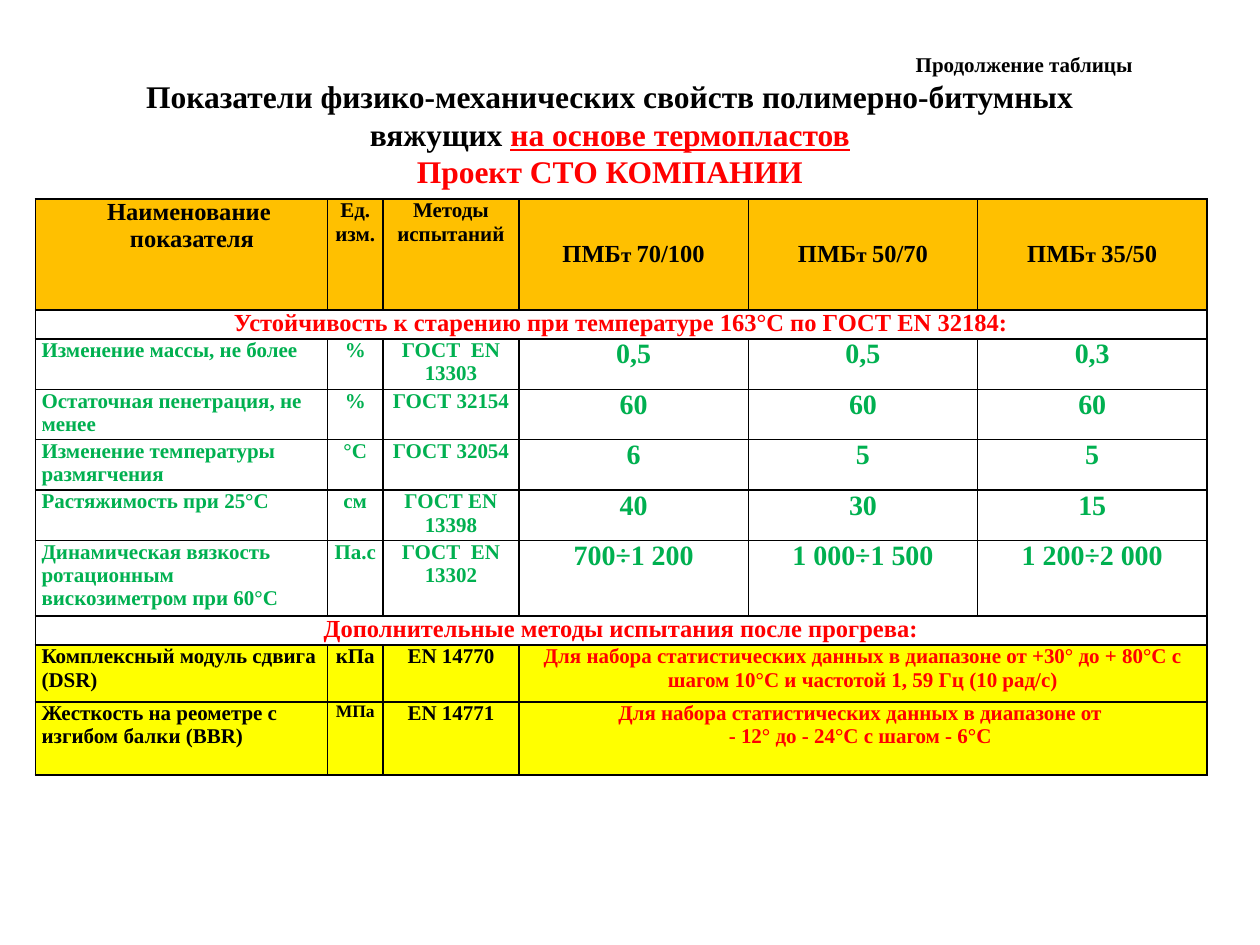
from dataclasses import dataclass

from lxml import etree
from pptx import Presentation
from pptx.dml.color import RGBColor
from pptx.enum.text import MSO_ANCHOR, MSO_AUTO_SIZE, PP_ALIGN
from pptx.oxml.ns import qn
from pptx.util import Inches, Pt

LEFT, CENTER, RIGHT = PP_ALIGN.LEFT, PP_ALIGN.CENTER, PP_ALIGN.RIGHT
TOP, MIDDLE = MSO_ANCHOR.TOP, MSO_ANCHOR.MIDDLE
NO_AUTOFIT = MSO_AUTO_SIZE.NONE
TITLE_ONLY = 5


@dataclass(frozen=True)
class Theme:
    font: str = "Times New Roman"
    black: str = "000000"
    red: str = "FF0000"
    green: str = "00B050"
    orange: str = "FFC000"
    yellow: str = "FFFF00"
    tiny: int = 10
    small: int = 12
    medium: int = 14
    large: int = 16
    title: int = 18


THEME = Theme()
COLUMN_WIDTHS = [2.32, 0.44, 1.08] + [1.82] * 3
ROW_HEIGHTS = [0.88, 0.23] + [0.4] * 4 + [0.6, 0.23, 0.45, 0.58]

GRADES = ["70/100", "50/70", "35/50"]
AGEING_TITLE = "Устойчивость к старению при температуре 163°С по ГОСТ EN 32184:"
AGEING_ROWS = [
    ("Изменение массы, не более", "%", "ГОСТ  EN 13303", "0,5", "0,5", "0,3"),
    ("Остаточная пенетрация, не менее", "%", "ГОСТ 32154", "60", "60", "60"),
    ("Изменение температуры размягчения", "°С", "ГОСТ 32054", "6", "5", "5"),
    ("Растяжимость при 25°С", "см", "ГОСТ EN 13398", "40", "30", "15"),
    ("Динамическая вязкость ротационным вискозиметром при 60°С", "Па.с",
     "ГОСТ  EN 13302", "700÷1 200", "1 000÷1 500", "1 200÷2 000"),
]
EXTRA_TITLE = "Дополнительные методы испытания после прогрева:"
EXTRA_ROWS = [
    ("Комплексный модуль сдвига (DSR)", "кПа", THEME.small, "EN 14770",
     ["Для набора статистических данных в диапазоне от +30° до + 80°С "
      "с шагом 10°С и частотой 1, 59 Гц (10 рад/с)"]),
    ("Жесткость на реометре с изгибом балки (BBR)", "МПа", THEME.tiny, "EN 14771",
     ["Для набора статистических данных в диапазоне от ",
      "- 12° до - 24°С с шагом - 6°С "]),
]


def add_run(paragraph, text, size=THEME.small, color=THEME.black, underline=False):
    run = paragraph.add_run()
    run.text = text
    run.font.name = THEME.font
    run.font.size = Pt(size)
    run.font.bold = True
    run.font.underline = underline
    run.font.color.rgb = RGBColor.from_string(color)


def write_text(paragraph, text, align=CENTER, indent=0, **run_format):
    paragraph.alignment = align
    if indent:
        paragraph._p.get_or_add_pPr().set("marL", str(Inches(indent)))
    runs = [(text, {})] if isinstance(text, str) else text
    for run_text, changes in runs:
        add_run(paragraph, run_text, **{**run_format, **changes})


def write_paragraphs(frame, texts, **text_format):
    for index, text in enumerate(texts):
        paragraph = frame.add_paragraph() if index else frame.paragraphs[0]
        write_text(paragraph, text, **text_format)


def add_borders(cell):
    properties = cell._tc.get_or_add_tcPr()
    for side in ("a:lnL", "a:lnR", "a:lnT", "a:lnB"):
        line = etree.SubElement(properties, qn(side), w=str(Pt(1)))
        fill = etree.SubElement(line, qn("a:solidFill"))
        etree.SubElement(fill, qn("a:srgbClr"), val=THEME.black)


def fill_cell(cell, texts, anchor=TOP, **text_format):
    cell.vertical_anchor = anchor
    write_paragraphs(cell.text_frame, texts, **text_format)


def style_row(row, color=None):
    for cell in row.cells:
        cell.margin_left = cell.margin_right = Inches(0.05)
        cell.margin_top = cell.margin_bottom = 0
        add_borders(cell)
        if color:
            cell.fill.solid()
            cell.fill.fore_color.rgb = RGBColor.from_string(color)
        else:
            cell.fill.background()


def fill_header(row):
    style_row(row, THEME.orange)
    name, unit, method, *grade_cells = row.cells
    fill_cell(name, ["Наименование", " показателя"], size=THEME.medium, indent=0.12)
    fill_cell(unit, ["Ед. изм."])
    fill_cell(method, ["Методы испытаний"])
    for cell, grade in zip(grade_cells, GRADES):
        label = [("ПМБ", {}), ("т ", {"size": THEME.small}), (grade, {})]
        fill_cell(cell, [label], anchor=MIDDLE, size=THEME.medium)


def fill_section(row, text):
    style_row(row)
    cells = list(row.cells)
    cells[0].merge(cells[-1])
    fill_cell(cells[0], [text], size=THEME.medium, color=THEME.red)


def fill_ageing_row(row, values):
    style_row(row)
    for column, (cell, value) in enumerate(zip(row.cells, values)):
        fill_cell(cell, [value], align=CENTER if column else LEFT,
                  size=THEME.small if column < 3 else THEME.large, color=THEME.green)


def fill_extra_row(row, name, unit, unit_size, method, notes):
    style_row(row, THEME.yellow)
    cells = list(row.cells)
    cells[3].merge(cells[-1])
    fill_cell(cells[0], [name], align=LEFT)
    fill_cell(cells[1], [unit], size=unit_size)
    fill_cell(cells[2], [method])
    fill_cell(cells[3], notes, color=THEME.red)


def add_title(slide):
    title = slide.shapes.title
    title.left, title.top = Inches(0.59), Inches(0.36)
    title.width, title.height = Inches(8.5), Inches(1.21)
    frame = title.text_frame
    frame.auto_size = NO_AUTOFIT
    frame.word_wrap = True
    frame.vertical_anchor = TOP
    write_text(frame.paragraphs[0], "Продолжение таблицы", align=RIGHT)
    heading = [
        ("Показатели физико-механических свойств полимерно-битумных вяжущих ", {}),
        ("на основе термопластов", {"color": THEME.red, "underline": True}),
    ]
    write_text(frame.add_paragraph(), heading, size=THEME.title)
    write_text(frame.add_paragraph(), "Проект СТО КОМПАНИИ",
               size=THEME.title, color=THEME.red)


def add_properties_table(slide):
    table = slide.shapes.add_table(
        len(ROW_HEIGHTS), len(COLUMN_WIDTHS), Inches(0.28), Inches(1.58),
        Inches(sum(COLUMN_WIDTHS)), Inches(sum(ROW_HEIGHTS))).table
    table.first_row = table.horz_banding = False
    for column, width in zip(table.columns, COLUMN_WIDTHS):
        column.width = Inches(width)
    for row, height in zip(table.rows, ROW_HEIGHTS):
        row.height = Inches(height)

    rows = iter(table.rows)
    fill_header(next(rows))
    fill_section(next(rows), AGEING_TITLE)
    for values in AGEING_ROWS:
        fill_ageing_row(next(rows), values)
    fill_section(next(rows), EXTRA_TITLE)
    for values in EXTRA_ROWS:
        fill_extra_row(next(rows), *values)


def main():
    presentation = Presentation()
    presentation.slide_width, presentation.slide_height = Inches(10), Inches(7.5)
    slide = presentation.slides.add_slide(presentation.slide_layouts[TITLE_ONLY])
    add_title(slide)
    add_properties_table(slide)
    presentation.save("out.pptx")


if __name__ == "__main__":
    main()
